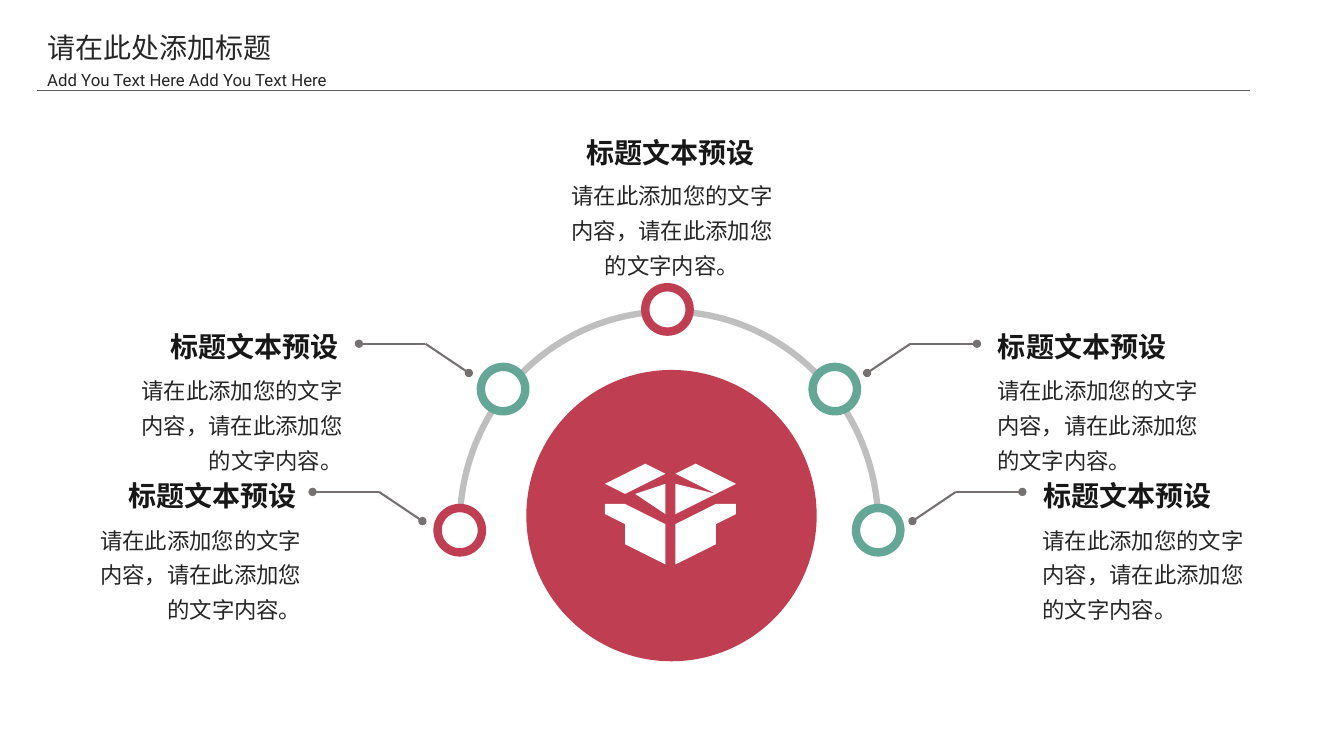
from dataclasses import dataclass

from lxml.etree import SubElement
from pptx import Presentation
from pptx.dml.color import RGBColor
from pptx.enum.shapes import MSO_CONNECTOR as Connector, MSO_SHAPE as Shape
from pptx.enum.text import MSO_ANCHOR as Anchor, MSO_AUTO_SIZE as AutoSize, PP_ALIGN as Align
from pptx.oxml.ns import qn
from pptx.util import Inches, Pt

# Content
TITLE = "请在此处添加标题"
SUBTITLE = "Add You Text Here Add You Text Here"
HEADING = "标题文本预设"
BODY = "请在此添加您的文字内容，请在此添加您的文字内容。"


@dataclass(frozen=True)
class Theme:
    font: str = "Roboto"
    red: str = "C03E51"
    green: str = "64A797"
    white: str = "FFFFFF"
    arc: str = "BFBFBF"
    leader: str = "767171"
    rule: str = "595959"
    heading: str = "181717"
    text: str = "262626"
    title_size: int = 20
    body_size: int = 16
    subtitle_size: int = 12


THEME = Theme()

# Layout in grid cells: the slide is 75 rows high, with square cells
SLIDE_W, SLIDE_H = Inches(13.33), Inches(7.5)
CELL = SLIDE_H / 75
COLUMNS = SLIDE_W / CELL

ARC_CENTRE, ARC_RADII = (66.35, 52.1), (20.75, 21.2)
RING = 4.4
RINGS = [  # centre column, centre row, colour
    (66.2, 30.7, THEME.red),
    (82.8, 38.6, THEME.green),
    (45.6, 52.6, THEME.red),
    (87.1, 52.6, THEME.green),
    (49.9, 38.6, THEME.green),
]
LEADER_RUN, LEADER_RISE, LEADER_FLAT = 4.3, 2.9, 6.6
HEADING_W, HEADING_H, BODY_H = 22, 2.9, 10.5
SIDES = [  # direction, leader start, heading place, body column and width
    (-1, (41.9, 51.7), (8.4, 47.7), (8.4, 21.5)),
    (-1, (46.5, 37.0), (12.6, 32.9), (13.8, 20.2)),
    (1, (86.0, 37.0), (98.0, 32.9), (98.9, 22)),
    (1, (90.5, 51.7), (102.5, 47.7), (103.4, 21.1)),
]
BODY_DROP = 3.75

# Left half of the open box; the right half is its mirror image
BOX_HALF = [
    [(62.6, 49.3), (66.3, 47.5), (66.4, 47.5), (66.4, 51.4), (66.3, 51.4), (62.6, 49.4)],
    [(66.1, 51.6), (62.1, 49.7), (62, 49.7), (60.4, 50.4), (60.3, 50.5), (60.4, 50.6),
     (64.3, 52.6), (64.4, 52.6), (66.1, 51.8)],
    [(66.1, 47), (64.4, 46.2), (64.3, 46.2), (60.4, 48.1), (60.3, 48.2), (60.4, 48.4),
     (62, 49.2), (62.1, 49.2), (66.1, 47.3)],
    [(62.2, 52.2), (62.4, 52.1), (62.5, 52.1), (64.3, 53), (64.4, 53), (66.3, 52.1),
     (66.4, 52.2), (66.4, 56.2), (66.3, 56.2), (62.4, 54.1), (62.2, 54)],
]

deck = Presentation()
deck.slide_width, deck.slide_height = SLIDE_W, SLIDE_H
slide = deck.slides.add_slide(deck.slide_layouts[5])
shapes = slide.shapes


def cells(*lengths):
    return [round(length * CELL) for length in lengths]


def rgb(colour):
    return RGBColor.from_string(colour)


def style(shape, fill=None, line=None, width=0):
    shape.shadow.inherit = False
    if fill:
        shape.fill.solid()
        shape.fill.fore_color.rgb = rgb(fill)
    else:
        shape.fill.background()
    if line:
        shape.line.color.rgb = rgb(line)
        shape.line.width = Pt(width)
    else:
        shape.line.fill.background()


def draw_line(start, end, colour, width, dot=None):
    line = shapes.add_connector(Connector.STRAIGHT, *cells(*start, *end))
    line.line.color.rgb = rgb(colour)
    line.line.width = Pt(width)
    if dot:
        SubElement(line.line._get_or_add_ln(), qn(f"a:{dot}"), type="oval")
    SubElement(line._element.spPr, qn("a:effectLst"))


def write(box, text, size, colour, align=Align.LEFT, bold=False,
          spacing=1.0, anchor=Anchor.TOP, inset=True, wrap=True):
    frame = box.text_frame
    frame.text = text
    frame.word_wrap = wrap
    frame.auto_size = AutoSize.NONE
    frame.vertical_anchor = anchor
    frame.margin_left = frame.margin_right = Inches(0.1 if inset else 0)
    frame.margin_top = frame.margin_bottom = Inches(0.05 if inset else 0)
    paragraph = frame.paragraphs[0]
    paragraph.alignment = align
    paragraph.line_spacing = spacing
    font = paragraph.runs[0].font
    font.name, font.size, font.bold = THEME.font, Pt(size), bold
    font.color.rgb = rgb(colour)


def add_heading(place, align, wrap=True):
    write(shapes.add_textbox(*cells(*place)), HEADING, THEME.title_size, THEME.heading,
          align, bold=True, anchor=Anchor.MIDDLE, wrap=wrap)


def add_body(place, align):
    write(shapes.add_textbox(*cells(*place)), BODY, THEME.body_size, THEME.text,
          align, spacing=1.3, inset=False)


# Arc with its rings
(arc_x, arc_y), (radius_x, radius_y) = ARC_CENTRE, ARC_RADII
arc = shapes.add_shape(Shape.ARC, *cells(arc_x - radius_x, arc_y - radius_y,
                                         2 * radius_x, 2 * radius_y))
arc.adjustments[0], arc.adjustments[1] = 108, 0  # from 180 degrees round to 0
style(arc, line=THEME.arc, width=4.5)
for x, y, colour in RINGS:
    ring = shapes.add_shape(Shape.OVAL, *cells(x - RING / 2, y - RING / 2, RING, RING))
    style(ring, THEME.white, colour, 6)

# Side topics with bent leaders
for direction, start, (heading_x, heading_y), (body_x, body_w) in SIDES:
    bend = (start[0] + direction * LEADER_RUN, start[1] - LEADER_RISE)
    end = (bend[0] + direction * LEADER_FLAT, bend[1])
    draw_line(start, bend, THEME.leader, 1.5, "headEnd")
    draw_line(bend, end, THEME.leader, 1.5, "tailEnd")
    align = Align.LEFT if direction > 0 else Align.RIGHT
    add_heading((heading_x, heading_y, HEADING_W, HEADING_H), align)
    add_body((body_x, heading_y + BODY_DROP, body_w, BODY_H), align)

# Top topic
add_heading((57.1, 12.9, 18.8, 4.4), Align.CENTER, wrap=False)
add_body((55.7, 17.3, 21.9, BODY_H), Align.CENTER)

# Centre disc with the open box
disc = shapes.add_shape(Shape.OVAL, *cells(52.2, 36.7, 28.8, 28.9))
style(disc, THEME.red)
mirrored = [[(COLUMNS - x, y) for x, y in panel] for panel in BOX_HALF]
outline = shapes.build_freeform(*BOX_HALF[0][0], scale=CELL)
for panel in BOX_HALF + mirrored:
    outline.move_to(*panel[0])
    outline.add_line_segments(panel[1:], close=True)
style(outline.convert_to_shape(), THEME.white)

# Page header
title = shapes.title
title.left, title.top, title.width, title.height = cells(3.7, 2.5, 27.5, 4.4)
write(title, TITLE, THEME.title_size, THEME.text)
write(shapes.add_textbox(*cells(3.7, 5.8, 33.4, 3.4)), SUBTITLE,
      THEME.subtitle_size, THEME.text, spacing=1.3)
draw_line((3.7, 9), (124, 9), THEME.rule, 0.5)

deck.save("out.pptx")
